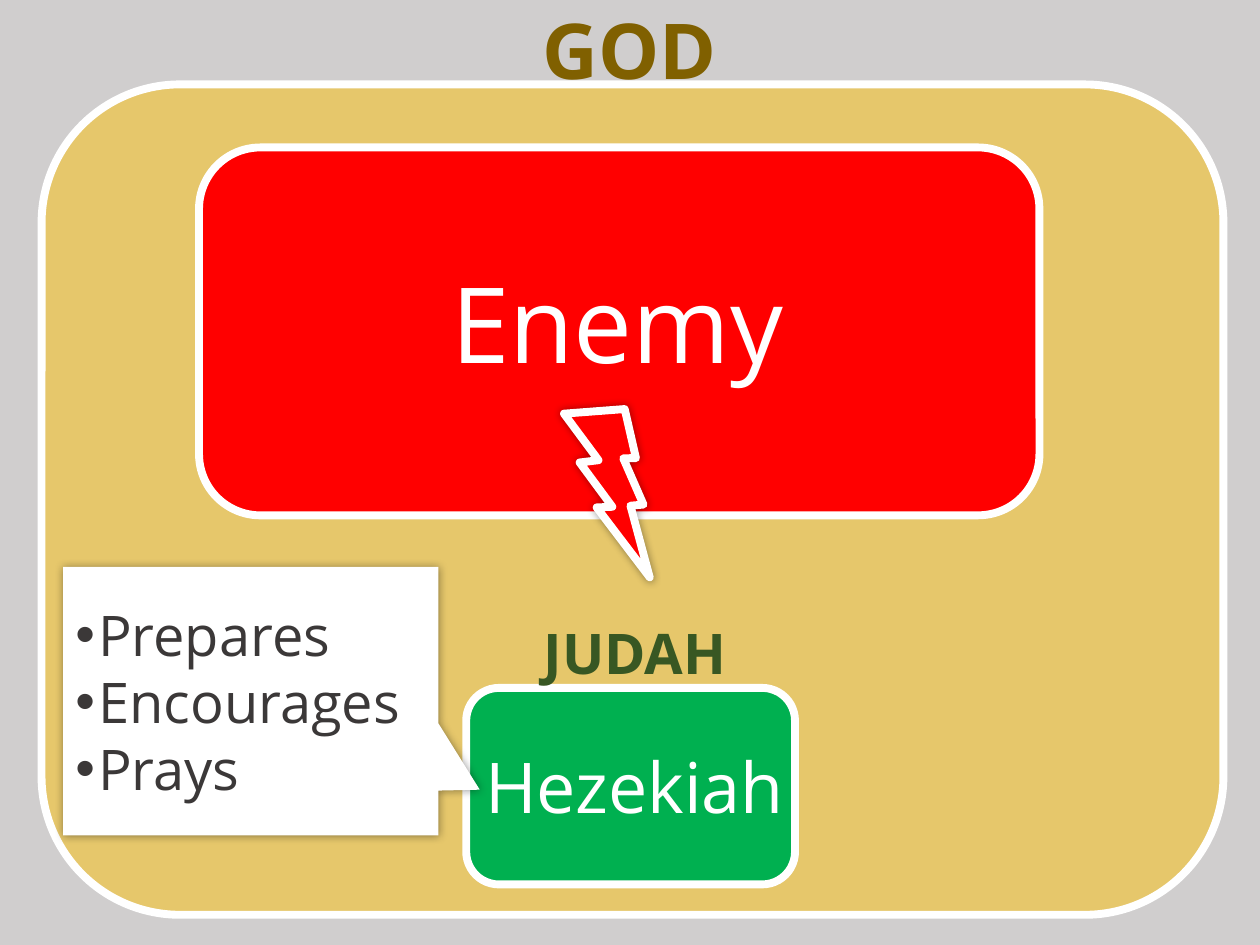
from dataclasses import dataclass

from lxml.etree import SubElement
from pptx import Presentation
from pptx.dml.color import RGBColor as Color
from pptx.enum.shapes import MSO_SHAPE as Preset
from pptx.enum.text import MSO_ANCHOR as Anchor, MSO_AUTO_SIZE as AutoSize, PP_ALIGN as Align
from pptx.oxml.ns import qn
from pptx.util import Inches, Pt

COLUMNS, ROWS = 100, 75
CELL = Inches(0.1)


@dataclass(frozen=True)
class Theme:
    font: str = "Open Sans"
    backdrop: str = "D0CECE"
    gold: str = "FFC000"
    dark_gold: str = "806000"
    green: str = "00B050"
    dark_green: str = "385723"
    red: str = "FF0000"
    white: str = "FFFFFF"
    ink: str = "3B3838"
    shade: str = "000000"
    body: int = 32
    name: int = 40
    title: int = 44
    display: int = 60
    outline: float = 4.5


@dataclass(frozen=True)
class Box:
    left: float
    top: float
    width: float
    height: float

    def inner(self, column, row, width, height):
        return Box(self.left + column, self.top + row, width, height)

    def lengths(self):
        return [round(cells * CELL) for cells in (self.left, self.top, self.width, self.height)]


THEME = Theme()


def add_block(slide, preset, box, fill, outlined=True):
    shape = slide.shapes.add_shape(preset, *box.lengths())
    shape.shadow.inherit = False
    shape.fill.solid()
    shape.fill.fore_color.rgb = Color.from_string(fill)
    if outlined:
        shape.line.color.rgb = Color.from_string(THEME.white)
        shape.line.width = Pt(THEME.outline)
    else:
        shape.line.fill.background()
    return shape


def add_alpha(color_element, percent):
    SubElement(color_element, qn("a:alpha"), val=str(percent * 1000))


def add_shadow(shape):
    effects = shape._element.spPr.find(qn("a:effectLst"))
    shadow = SubElement(effects, qn("a:outerShdw"), blurRad=str(Pt(5)), dist="0", dir="0")
    add_alpha(SubElement(shadow, qn("a:srgbClr"), val=THEME.shade), 40)


def add_run(paragraph, text, size, color, bold=False):
    run = paragraph.add_run()
    run.text = text
    run.font.name = THEME.font
    run.font.size = Pt(size)
    run.font.bold = bold
    run.font.color.rgb = Color.from_string(color)


def add_label(slide, box, text, size, color, bold=False):
    frame = slide.shapes.add_textbox(*box.lengths()).text_frame
    frame.word_wrap = True
    frame.auto_size = AutoSize.SHAPE_TO_FIT_TEXT
    paragraph = frame.paragraphs[0]
    paragraph.alignment = Align.CENTER
    add_run(paragraph, text, size, color, bold)


def add_bullet(paragraph):
    indent = Inches(0.18)
    properties = paragraph._p.get_or_add_pPr()
    properties.set("marL", str(indent))
    properties.set("indent", str(-indent))
    SubElement(properties, qn("a:buFont"), typeface="Arial")
    SubElement(properties, qn("a:buChar"), char="•")


def draw_realm(slide, box):
    realm = add_block(slide, Preset.ROUNDED_RECTANGLE, box, THEME.gold)
    add_alpha(realm._element.spPr.find(qn("a:solidFill"))[0], 48)
    add_label(slide, box.inner(37.6, -7, 18.2, 8.4), "GOD", THEME.title, THEME.dark_gold, True)


def draw_judah(slide, box):
    add_block(slide, Preset.ROUNDED_RECTANGLE, box, THEME.green)
    add_label(slide, box.inner(0.3, 3.9, box.width, 7.7), "Hezekiah", THEME.name, THEME.white)
    add_label(slide, box.inner(4.3, -6, 18.2, 6.4), "JUDAH", THEME.body, THEME.dark_green, True)


def draw_enemy(slide, box):
    add_block(slide, Preset.ROUNDED_RECTANGLE, box, THEME.red)
    add_label(slide, box.inner(17.2, 8.3, 32, 11.1), "Enemy", THEME.display, THEME.white)
    bolt = add_block(slide, Preset.LIGHTNING_BOLT, box.inner(27.2, 20.8, 11.1, 11.7), THEME.red)
    bolt.rotation = 21.5
    add_shadow(bolt)


def draw_response(slide, box, actions):
    callout = add_block(slide, Preset.RECTANGULAR_CALLOUT, box, THEME.white, outlined=False)
    callout.adjustments[0] = 0.61
    callout.adjustments[1] = 0.33
    add_shadow(callout)
    frame = callout.text_frame
    frame.word_wrap = True
    frame.vertical_anchor = Anchor.MIDDLE
    for index, action in enumerate(actions):
        paragraph = frame.add_paragraph() if index else frame.paragraphs[0]
        paragraph.alignment = Align.LEFT
        add_bullet(paragraph)
        add_run(paragraph, action, THEME.body, THEME.ink)


def main():
    presentation = Presentation()
    presentation.slide_width = COLUMNS * CELL
    presentation.slide_height = ROWS * CELL
    slide = presentation.slides.add_slide(presentation.slide_layouts[6])
    page = Box(0, 0, COLUMNS, ROWS)
    add_block(slide, Preset.RECTANGLE, page, THEME.backdrop, outlined=False)
    draw_realm(slide, page.inner(3.3, 6.7, 93.8, 65.9))
    draw_judah(slide, page.inner(37, 54.6, 26.1, 15.6))
    draw_enemy(slide, page.inner(15.8, 11.7, 66.7, 29.2))
    draw_response(slide, page.inner(5, 45, 29.8, 21.3), ("Prepares", "Encourages", "Prays"))
    presentation.save("out.pptx")


if __name__ == "__main__":
    main()
